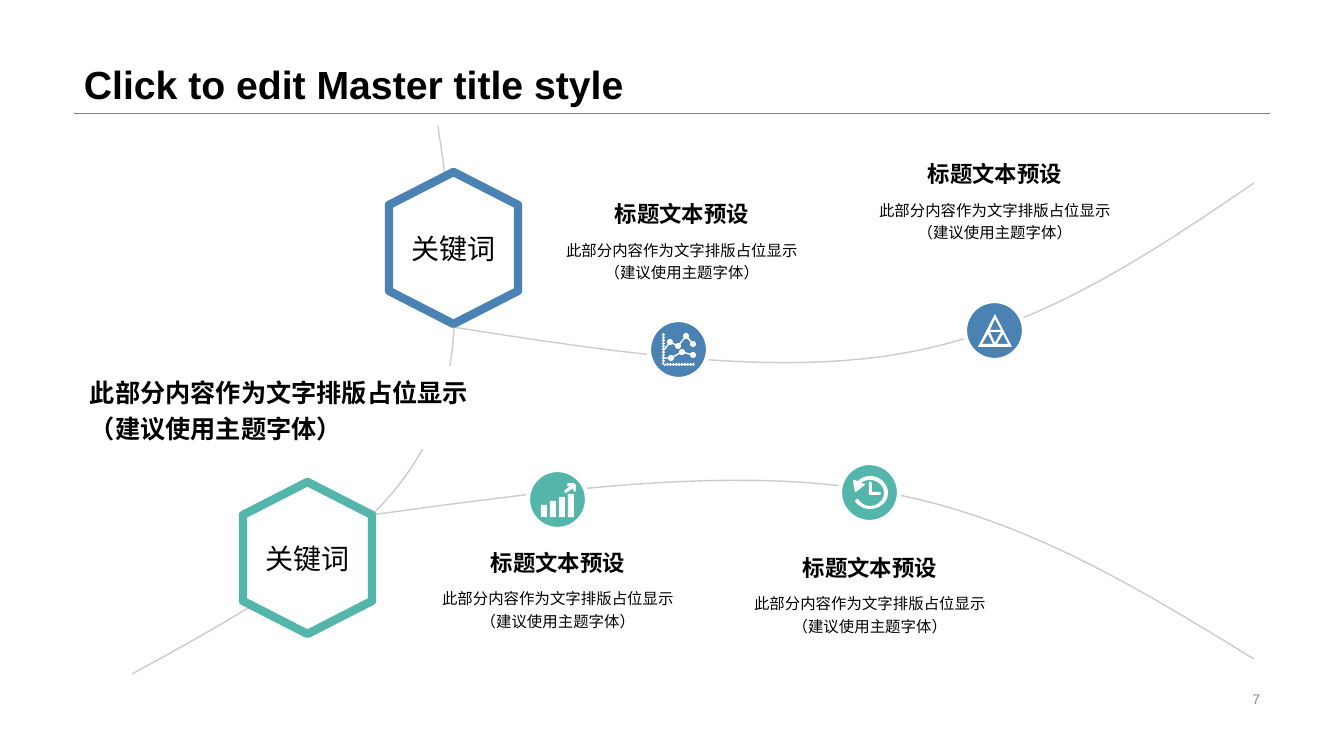
import dataclasses

import pptx
import pptx.dml.color
import pptx.enum.shapes
import pptx.enum.text
import pptx.oxml.ns
import pptx.util
from lxml import etree

ALIGN = pptx.enum.text.PP_ALIGN
ANCHOR = pptx.enum.text.MSO_ANCHOR
SHAPE = pptx.enum.shapes.MSO_SHAPE


@dataclasses.dataclass(frozen=True)
class Theme:
    font: str = "Arial"
    black: str = "000000"
    white: str = "FFFFFF"
    blue: str = "4A83B3"
    green: str = "54B5AB"
    rule: str = "808080"
    curve: str = "CCCCCC"
    number: str = "8C8C8C"
    title_size: int = 28
    keyword_size: int = 20
    summary_size: int = 18
    heading_size: int = 16
    body_size: int = 11
    number_size: int = 10


THEME = Theme()
PX = 914400 / 100.8

TITLE = "Click to edit Master title style"
PAGE_NUMBER = "7"
KEYWORD = "关键词"
HEADING = "标题文本预设"
BODY = ["此部分内容作为文字排版占位显示", "（建议使用主题字体）"]
SUMMARY = ["\v".join(BODY)]

# In a path, a pair is a corner and a six-tuple is a cubic curve.
BRANCHES = [
    [(371, 515), (547, 491, 724, 466, 871, 490), (1018, 513, 1136, 587, 1254, 659)],
    [(452, 327), (612, 352, 772, 377, 905, 353), (1039, 329, 1147, 256, 1254, 183)],
    [(438, 126), (455, 243, 472, 360, 421, 452), (370, 543, 251, 609, 132, 674)],
]
HEXAGON = [(64.5, 0), (129, 33), (129, 119), (64.5, 152), (0, 119), (0, 33)]
KEYWORDS = [((389, 172), THEME.blue), ((243, 482), THEME.green)]

# icon, colour, circle corner, heading corner
TOPICS = [
    ("trend", THEME.blue, (649, 320), (540, 197)),
    ("pyramid", THEME.blue, (965, 301), (853, 157)),
    ("growth", THEME.green, (528, 470), (416, 546)),
    ("history", THEME.green, (840, 463), (728, 551)),
]
CIRCLE, ICON_INSET = 59, 13
TEXT_WIDTH, HEADING_HEIGHT, BODY_HEIGHT = 284, 35, 80

BAR_TOPS = [22, 18, 14, 11]
GROWTH_ARROW = [(27, 0), (33, 0), (35, 2), (35, 7), (34, 9), (32, 7),
                (32, 5), (25, 10), (23, 8), (29, 3), (27, 3), (26, 2)]
ICONS = {
    "pyramid": [
        [(17, 0), (0, 33), (34, 33)],
        [(17, 5), (23, 16), (12, 16)],
        [(4, 30), (10, 20), (15, 30)],
        [(12, 18), (23, 18), (17, 29)],
        [(25, 20), (30, 30), (19, 30)],
    ],
    "growth": [[(9 * i, top), (9 * i + 6, top), (9 * i + 6, 34), (9 * i, 34)]
               for i, top in enumerate(BAR_TOPS)] + [GROWTH_ARROW],
    "history": [
        [(17, 5), (19, 7), (19, 16), (27, 16), (28, 17), (27, 19), (17, 19), (16, 18), (16, 7)],
        [(17, 0), (27, 0, 35, 8, 35, 17), (35, 26, 27, 33, 17, 33), (11, 33, 5, 30, 2, 25),
         (4, 23), (5, 23), (8, 27, 12, 30, 17, 30), (25, 30, 31, 24, 31, 17),
         (31, 10, 25, 4, 17, 4), (14, 4, 11, 5, 8, 7), (12, 8), (12, 9), (3, 16), (2, 16),
         (0, 5), (0, 4), (1, 4), (5, 5), (8, 2, 13, 0, 17, 0)],
    ],
}
TREND_LINES = [
    [(2, 17), (8, 9), (16, 13), (24, 3), (31, 11)],
    [(2, 25), (9, 25), (20, 19), (31, 22)],
]
DOT_RADIUS, TICKS, TICK_STEP = 3, 11, 2.9

deck = pptx.Presentation()
deck.slide_width, deck.slide_height = round(1344 * PX), round(756 * PX)
page = deck.slides.add_slide(deck.slide_layouts[6])


def rgb(code):
    return pptx.dml.color.RGBColor.from_string(code)


def paint(shape, fill=None, line=None, width=0):
    shape.shadow.inherit = False
    if fill:
        shape.fill.solid()
        shape.fill.fore_color.rgb = rgb(fill)
    else:
        shape.fill.background()
    if line:
        shape.line.color.rgb = rgb(line)
        shape.line.width = pptx.util.Pt(width)
        etree.SubElement(shape.line._get_or_add_ln(), pptx.oxml.ns.qn("a:round"))
    else:
        shape.line.fill.background()
    return shape


def flatten(path, steps=20):
    """Turn corners and cubic curves into a plain list of points."""
    points = [path[0]]
    for part in path[1:]:
        if len(part) == 2:
            points.append(part)
            continue
        controls = [points[-1], part[:2], part[2:4], part[4:]]
        for step in range(1, steps + 1):
            t = step / steps
            weights = [(1 - t) ** 3, 3 * t * (1 - t) ** 2, 3 * t * t * (1 - t), t ** 3]
            points.append(tuple(sum(w * c[axis] for w, c in zip(weights, controls))
                                for axis in (0, 1)))
    return points


def draw(paths, corner=(0, 0), closed=True, **colours):
    builder = None
    for path in paths:
        points = [((x + corner[0]) * PX, (y + corner[1]) * PX) for x, y in flatten(path)]
        if builder is None:
            builder = page.shapes.build_freeform(*points[0], scale=1.0)
        else:
            builder.move_to(*points[0])
        builder.add_line_segments(points[1:], close=closed)
    return paint(builder.convert_to_shape(), **colours)


def preset(kind, *frame, **colours):
    return paint(page.shapes.add_shape(kind, *(round(v * PX) for v in frame)), **colours)


def write(shape, lines, size, color=THEME.black, bold=False, align=ALIGN.LEFT,
          spacing=1.0, **frame_format):
    frame = shape.text_frame
    for name, value in {"word_wrap": True, **frame_format}.items():
        setattr(frame, name, value)
    for index, line in enumerate(lines):
        para = frame.add_paragraph() if index else frame.paragraphs[0]
        para.text, para.alignment, para.line_spacing = line, align, spacing
        for span in para.runs:
            for name, value in {"name": THEME.font, "size": pptx.util.Pt(size), "bold": bold}.items():
                setattr(span.font, name, value)
            span.font.color.rgb = rgb(color)


def label(frame, *content, **formats):
    box = page.shapes.add_textbox(*(round(v * PX) for v in frame))
    write(box, *content, **formats)


def draw_trend(corner):
    """Two dotted lines over a pair of toothed axes."""
    side, foot = [], []
    for tick in range(TICKS):
        start = 1 + tick * TICK_STEP
        side += [(1, start), (0, start), (0, start + 1.4), (1, start + 1.4)]
        foot += [(start + 1, 32), (start + 1, 33), (start + 2.4, 33), (start + 2.4, 32)]
    inner_side = [(3 - x, y) for x, y in reversed(side)]
    inner_foot = [(x, 63 - y) for x, y in reversed(foot)]
    draw([[(1, 0)] + side + foot + inner_foot + inner_side + [(2, 0)]], corner, fill=THEME.white)
    for points in TREND_LINES:
        draw([points], corner, closed=False, line=THEME.white, width=1)
        for x, y in points[1:]:
            preset(SHAPE.OVAL, corner[0] + x - DOT_RADIUS, corner[1] + y - DOT_RADIUS,
                   2 * DOT_RADIUS, 2 * DOT_RADIUS, fill=THEME.white)


rule = page.shapes.add_connector(pptx.enum.shapes.MSO_CONNECTOR.STRAIGHT,
                                 *(round(v * PX) for v in (74, 113, 1270, 113)))
rule.line.color.rgb = rgb(THEME.rule)
rule.line.width = pptx.util.Pt(0.25)
etree.SubElement(rule._element.spPr, pptx.oxml.ns.qn("a:effectLst"))

label((74, 0, 1196, 113), [TITLE], THEME.title_size, bold=True, spacing=0.9,
      vertical_anchor=ANCHOR.BOTTOM)
label((950, 687, 320, 23), [PAGE_NUMBER], THEME.number_size, color=THEME.number,
      align=ALIGN.RIGHT, vertical_anchor=ANCHOR.MIDDLE)

for branch in BRANCHES:
    draw([branch], closed=False, line=THEME.curve, width=1)

for corner, color in KEYWORDS:
    hexagon = draw([HEXAGON], corner, fill=THEME.white, line=color, width=6)
    write(hexagon, [KEYWORD], THEME.keyword_size, align=ALIGN.CENTER,
          vertical_anchor=ANCHOR.MIDDLE, word_wrap=False)

for icon, color, circle, (left, top) in TOPICS:
    label((left, top + HEADING_HEIGHT, TEXT_WIDTH, BODY_HEIGHT), BODY, THEME.body_size,
          align=ALIGN.CENTER, spacing=1.2)
    label((left, top, TEXT_WIDTH, HEADING_HEIGHT), [HEADING], THEME.heading_size, bold=True,
          align=ALIGN.CENTER, vertical_anchor=ANCHOR.BOTTOM)
    preset(SHAPE.OVAL, *circle, CIRCLE, CIRCLE, fill=color, line=THEME.white, width=3)
    icon_corner = [v + ICON_INSET for v in circle]
    if icon == "trend":
        draw_trend(icon_corner)
    else:
        draw(ICONS[icon], icon_corner, fill=THEME.white)

summary = preset(SHAPE.RECTANGLE, 80, 366, 405, 83, fill=THEME.white)
write(summary, SUMMARY, THEME.summary_size, bold=True, spacing=1.2, vertical_anchor=ANCHOR.TOP,
      auto_size=pptx.enum.text.MSO_AUTO_SIZE.SHAPE_TO_FIT_TEXT)

deck.save("out.pptx")
